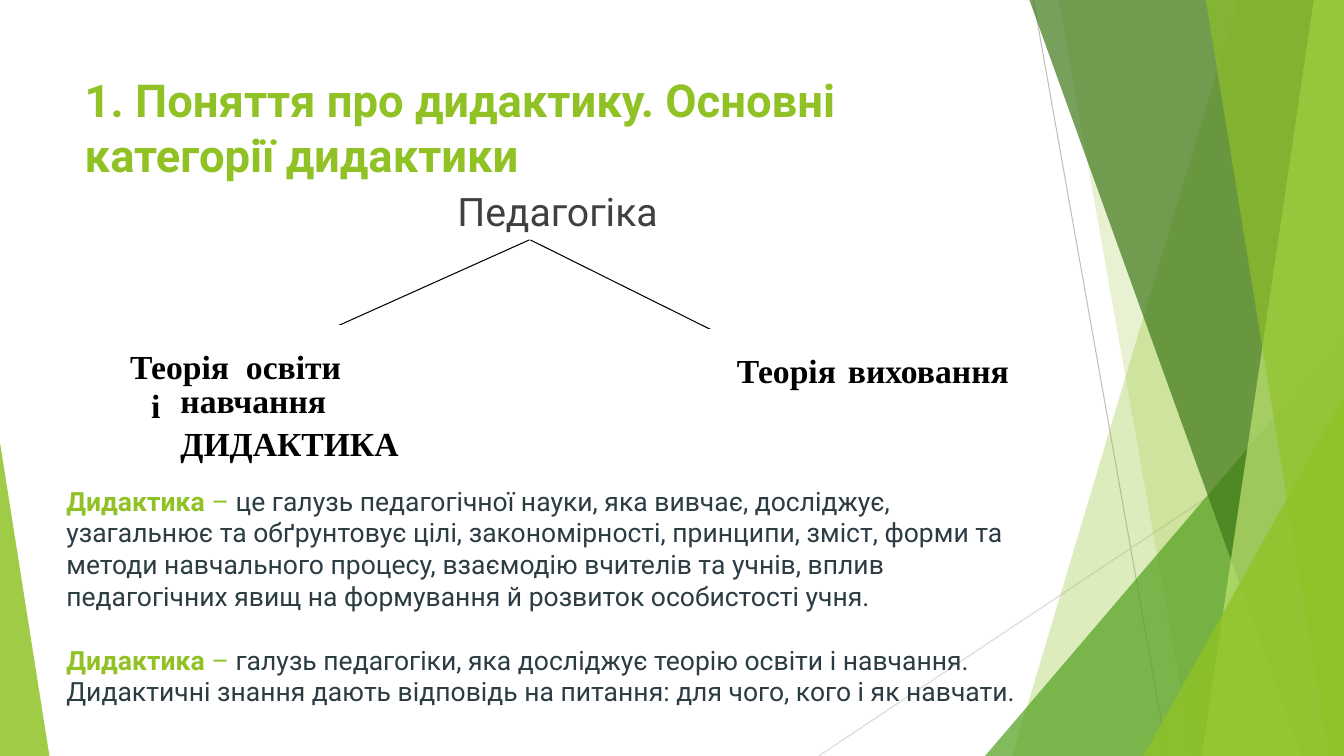
from pptx import Presentation
from pptx.dml.color import RGBColor
from pptx.enum.shapes import MSO_CONNECTOR, MSO_SHAPE
from pptx.enum.text import MSO_ANCHOR, PP_ALIGN
from pptx.oxml.ns import qn
from pptx.util import Inches, Pt
from lxml.etree import SubElement

WIDTH, HEIGHT = 13.33, 7.5


def rgb(value):
    return RGBColor.from_string(value)


class Deck:
    sans = "Roboto"
    serif = "Times New Roman"
    green = "90C226"
    dark = "2C3C43"

    def __init__(self, prs):
        self.s = prs.slides.add_slide(prs.slide_layouts[5])

    def paint(self, sp, fill=None, alpha=100, line=None):
        sp.shadow.inherit = False
        if fill:
            sp.fill.solid()
            sp.fill.fore_color.rgb = rgb(fill)
            if alpha < 100:
                color = sp.fill._xPr.find(qn("a:solidFill"))[0]
                SubElement(color, qn("a:alpha")).set("val", str(alpha * 1000))
        else:
            sp.fill.background()
        if line:
            sp.line.color.rgb = rgb(line)
            sp.line.width = Pt(0.75)
        else:
            sp.line.fill.background()

    def line(self, x1, y1, x2, y2, color):
        c = self.s.shapes.add_connector(
            MSO_CONNECTOR.STRAIGHT, Inches(x1), Inches(y1), Inches(x2), Inches(y2))
        c.line.color.rgb = rgb(color)
        c.line.width = Pt(0.75)
        SubElement(c._element.spPr, qn("a:effectLst"))

    def band(self, top_x, bottom_x, fill, alpha):
        points = [(top_x, 0), (WIDTH, 0), (WIDTH, HEIGHT), (bottom_x, HEIGHT)]
        points = [(Inches(x), Inches(y)) for x, y in points]
        fb = self.s.shapes.build_freeform(*points[0])
        fb.add_line_segments(points[1:], close=True)
        self.paint(fb.convert_to_shape(), fill, alpha)

    def triangle(self, x, y, w, apex, fill, alpha):
        sp = self.s.shapes.add_shape(
            MSO_SHAPE.ISOSCELES_TRIANGLE, Inches(x), Inches(y), Inches(w), Inches(HEIGHT - y))
        sp.adjustments[0] = apex
        self.paint(sp, fill, alpha)

    def frame(self, x, y, w, h, fill=None):
        sp = self.s.shapes.add_shape(
            MSO_SHAPE.RECTANGLE, Inches(x), Inches(y), Inches(w), Inches(h))
        self.paint(sp, fill, line="FFFFFF")

    def font(self, p, name, size, color=None, bold=None):
        p.font.name = name
        p.font.size = Pt(size)
        p.font.bold = bold
        if color:
            p.font.color.rgb = rgb(color)

    def title(self, text, x, y, w, h):
        sp = self.s.shapes.title
        sp.left, sp.top, sp.width, sp.height = Inches(x), Inches(y), Inches(w), Inches(h)
        tf = sp.text_frame
        tf.word_wrap = True
        tf.vertical_anchor = MSO_ANCHOR.TOP
        tf.text = text
        p = tf.paragraphs[0]
        p.alignment = PP_ALIGN.LEFT
        self.font(p, self.sans, 32.4, self.green, True)

    def box(self, x, y, w, h):
        tf = self.s.shapes.add_textbox(
            Inches(x), Inches(y), Inches(w), Inches(h)).text_frame
        tf.word_wrap = True
        return tf

    def heading(self, text, x, y, w, h):
        p = self.box(x, y, w, h).paragraphs[0]
        p.text = text
        p.alignment = PP_ALIGN.CENTER
        self.font(p, self.sans, 28, "404040")

    def label(self, text, x, y, w, h=0.4):
        tf = self.box(x, y, w, h)
        tf.margin_left = tf.margin_top = tf.margin_right = tf.margin_bottom = 0
        tf.text = text
        for p in tf.paragraphs:
            p.line_spacing = 1.07
            self.font(p, self.serif, 24, "000000", True)

    def definitions(self, term, meanings, x, y, w, h):
        tf = self.box(x, y, w, h)
        for i, meaning in enumerate(meanings):
            p = tf.add_paragraph() if i else tf.paragraphs[0]
            p.space_before = Pt(22.8 if i else 0)
            self.font(p, self.sans, 18.9)
            for text, color, bold in ((term, self.green, True),
                                      (" – ", self.green, False),
                                      (meaning, self.dark, False)):
                r = p.add_run()
                r.text = text
                r.font.bold = bold
                r.font.color.rgb = rgb(color)


def main():
    prs = Presentation()
    prs.slide_width, prs.slide_height = Inches(WIDTH), Inches(HEIGHT)
    d = Deck(prs)

    d.line(10.25, 0, 11.58, HEIGHT, "BFBFBF")
    d.line(WIDTH, 4.03, 8.12, HEIGHT, "D9D9D9")
    d.band(12.28, 10.04, d.green, 30)
    d.band(10.5, 11.83, d.green, 20)
    d.triangle(9.77, 3.33, 3.56, 1, "54A021", 72)
    d.band(10.21, 12.91, "3F7819", 70)
    d.band(13.03, 11.92, "C0E474", 70)
    d.band(11.96, 13.18, d.green, 65)
    d.triangle(11.34, 3.93, 1.99, 1, d.green, 80)
    d.triangle(0, 4.39, 0.49, 0, d.green, 85)

    d.title("1. Поняття про дидактику. Основні категорії дидактики", 0.74, 0.67, 9.4, 1.44)
    d.heading("Педагогіка", 0.83, 1.81, 9.4, 2.93)

    d.line(5.25, 2.38, 3.29, 3.26, "000000")
    d.line(5.26, 2.38, 7.05, 3.27, "000000")
    d.frame(0.77, 3.23, 3.18, 1.34, "FFFFFF")
    d.frame(6.24, 3.27, 3.18, 1.15)
    d.label("Теорія", 1.29, 3.4, 1.4)
    d.label("освіти", 2.44, 3.4, 1.33)
    d.label("і", 1.5, 3.79, 0.13)
    d.label("навчання\nДИДАКТИКА", 1.79, 3.74, 3.13, 0.92)
    d.label("Теорія", 7.31, 3.44, 1.4)
    d.label("виховання", 8.41, 3.44, 2.28)

    d.definitions("Дидактика", [
        "це галузь педагогічної науки, яка вивчає, досліджує, узагальнює та обґрунтовує "
        "цілі, закономірності, принципи, зміст, форми та методи навчального процесу, "
        "взаємодію вчителів та учнів, вплив педагогічних явищ на формування й розвиток "
        "особистості учня.",
        "галузь педагогіки, яка досліджує теорію освіти і навчання. Дидактичні знання "
        "дають відповідь на питання: для чого, кого і як навчати.",
    ], 0.56, 4.76, 9.87, 2.25)

    prs.save("out.pptx")


if __name__ == "__main__":
    main()
